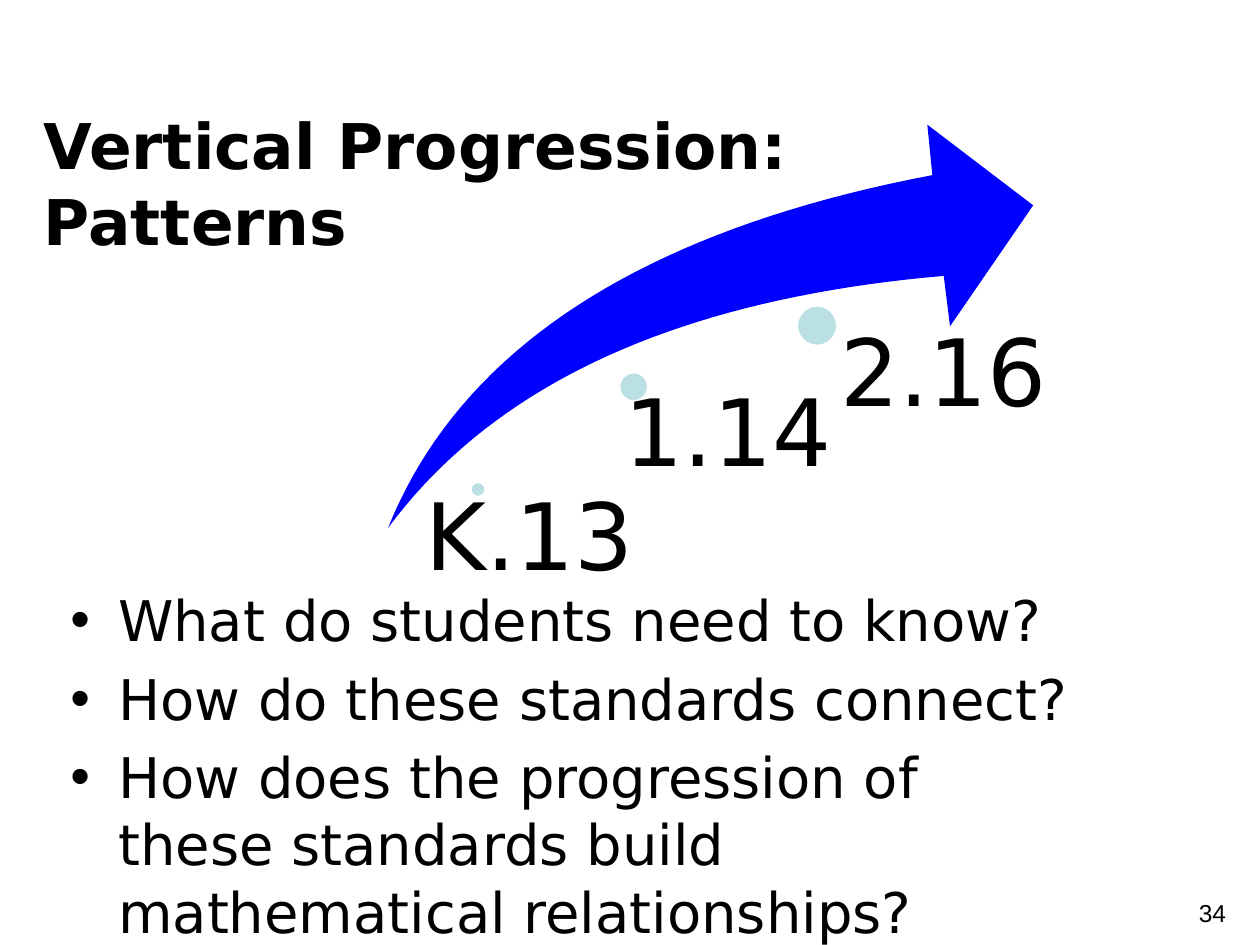
import pptx
import pptx.dml.color
import pptx.enum.shapes
import pptx.enum.text
import pptx.oxml
import pptx.oxml.ns
import pptx.util

Inches = pptx.util.Inches
Pt = pptx.util.Pt
ALIGN = pptx.enum.text.PP_ALIGN
ANCHOR = pptx.enum.text.MSO_ANCHOR


def color(hex_code):
    return pptx.dml.color.RGBColor.from_string(hex_code)


def bezier(start, first, second, end, steps=40):
    """Points along a cubic curve, without its start."""
    points = []
    for step in range(1, steps + 1):
        t = step / steps
        weights = ((1 - t) ** 3, 3 * t * (1 - t) ** 2, 3 * t ** 2 * (1 - t), t ** 3)
        points.append(tuple(
            sum(weight * value for weight, value in zip(weights, values))
            for values in zip(start, first, second, end)))
    return points


class SlideBuilder:
    font = "DejaVu Sans"
    ink = "000000"
    arrow_fill = "0000FF"
    dot_fill = "BBE0E3"
    dot_line = "FFFFFF"

    def __init__(self, page):
        self.page = page

    def text(self, at, lines, size, bold=False, font=None, align=ALIGN.LEFT,
             anchor=ANCHOR.TOP, insets=(0.1, 0.05, 0.1, 0.05),
             line_spacing=None, gap=0, bullet=None, indent=0):
        box = self.page.shapes.add_textbox(*map(Inches, at))
        frame = box.text_frame
        frame.word_wrap = True
        frame.vertical_anchor = anchor
        (frame.margin_left, frame.margin_top,
         frame.margin_right, frame.margin_bottom) = map(Inches, insets)
        for index, line in enumerate(lines):
            para = frame.paragraphs[0] if index == 0 else frame.add_paragraph()
            para.text = line
            para.alignment = align
            if line_spacing:
                para.line_spacing = line_spacing
            if index and gap:
                para.space_before = Pt(gap)
            if bullet:
                self.add_bullet(para, bullet, indent)
            para.font.name = font or self.font
            para.font.size = Pt(size)
            para.font.bold = bold
            para.font.color.rgb = color(self.ink)

    def add_bullet(self, para, bullet, indent):
        properties = para._p.get_or_add_pPr()
        properties.set("marL", str(Inches(indent)))
        properties.set("indent", str(-Inches(indent)))
        namespace = pptx.oxml.ns.nsdecls("a")
        properties.append(pptx.oxml.parse_xml(
            f'<a:buFont {namespace} typeface="Arial"/>'))
        properties.append(pptx.oxml.parse_xml(
            f'<a:buChar {namespace} char="{bullet}"/>'))

    def dot(self, left, top, size):
        shape = self.page.shapes.add_shape(
            pptx.enum.shapes.MSO_SHAPE.OVAL, *map(Inches, (left, top, size, size)))
        shape.shadow.inherit = False
        shape.fill.solid()
        shape.fill.fore_color.rgb = color(self.dot_fill)
        shape.line.color.rgb = color(self.dot_line)
        shape.line.width = Pt(2)

    def outline(self, points):
        corners = [(Inches(x), Inches(y)) for x, y in points]
        builder = self.page.shapes.build_freeform(*corners[0])
        builder.add_line_segments(corners[1:], close=True)
        shape = builder.convert_to_shape()
        shape.shadow.inherit = False
        shape.fill.solid()
        shape.fill.fore_color.rgb = color(self.arrow_fill)
        shape.line.fill.background()


def main():
    deck = pptx.Presentation()
    deck.slide_width, deck.slide_height = Inches(10), Inches(7.5)
    slide = SlideBuilder(deck.slides.add_slide(deck.slide_layouts[6]))

    # Slide number
    slide.text((7.5, 7.08, 2.33, 0.52), ["34"], 14, font="Arial", align=ALIGN.RIGHT)

    # Rising arrow
    tail = (3.08, 4.19)
    head_base = (7.49, 2.19)
    upper_edge = bezier(tail, (3.65, 2.77), (5.09, 1.83), (7.4, 1.39))
    lower_edge = bezier(head_base, (5.41, 2.37), (3.94, 3.03), tail)
    head = [(7.36, 0.99), (8.2, 1.63), (7.54, 2.59), head_base]
    slide.outline([tail] + upper_edge + head + lower_edge[:-1])

    # Standards along the arrow: dot, label place and left inset
    standards = [
        ("K.13", (3.73, 3.82, 0.13), (3.31, 3.89, 1.9, 0.92), 0.07),
        ("1.14", (4.91, 2.95, 0.24), (4.83, 3.07, 2, 1.74), 0.13),
        ("2.16", (6.32, 2.42, 0.33), (6.49, 2.59, 1.9, 2.22), 0.18),
    ]
    for label, dot, place, inset in standards:
        slide.dot(*dot)
        slide.text(place, [label], 53, insets=(inset, 0, 0, 0), line_spacing=0.9)

    # Title
    slide.text((0.25, 0.82, 9, 1.25), ["Vertical Progression:", "Patterns"], 36,
               bold=True, anchor=ANCHOR.MIDDLE)

    # Questions
    slide.text((0.46, 4.6, 8.29, 2.63), [
        "What do students need to know?",
        "How do these standards connect?",
        "How does the progression of these standards build mathematical relationships?",
    ], 32, gap=6.4, bullet="•", indent=0.38)

    deck.save("out.pptx")


if __name__ == "__main__":
    main()
